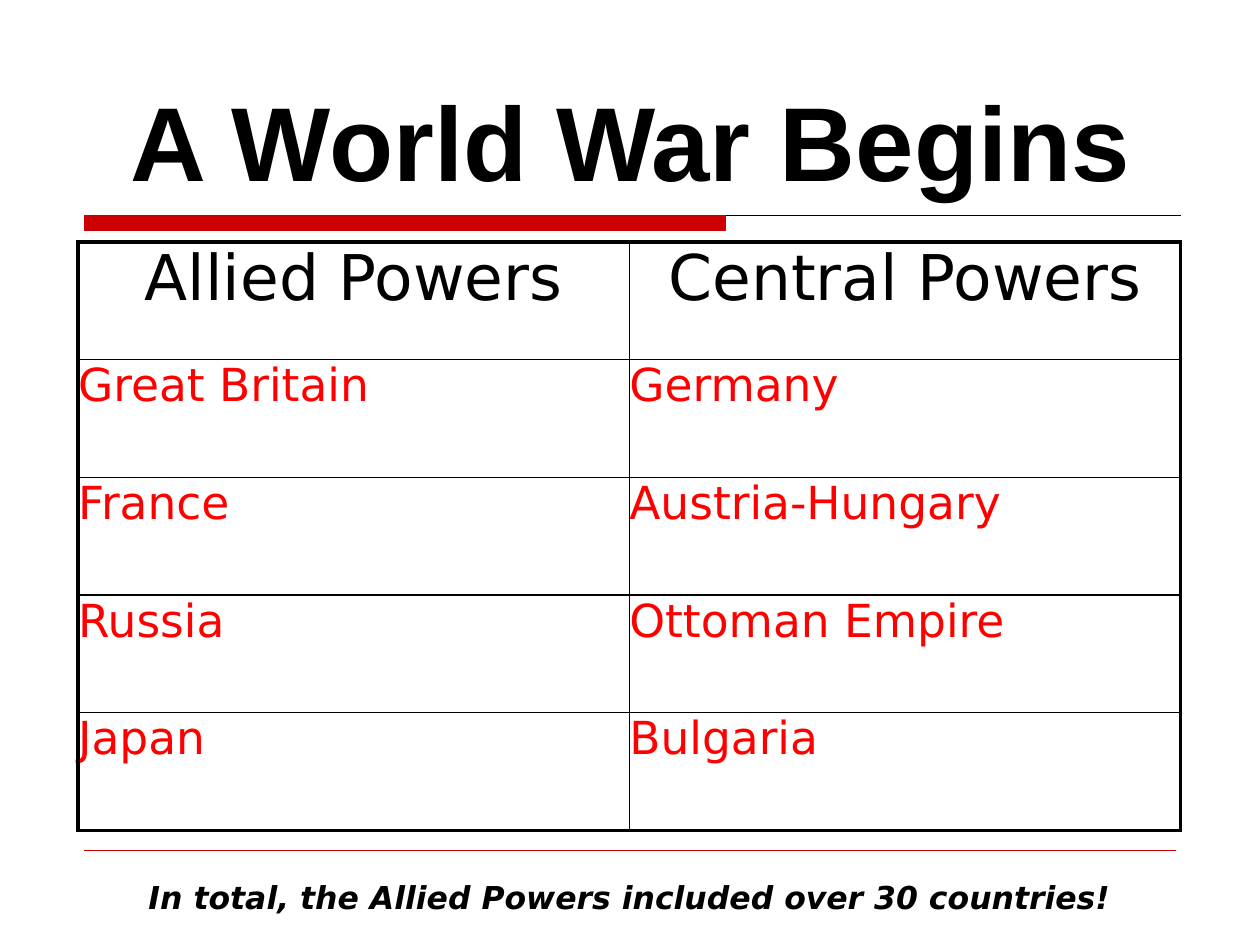
from lxml import etree
from pptx import Presentation
from pptx.dml.color import RGBColor
from pptx.enum.shapes import MSO_CONNECTOR, MSO_SHAPE
from pptx.enum.text import MSO_ANCHOR, MSO_AUTO_SIZE, PP_ALIGN
from pptx.oxml.ns import qn
from pptx.util import Inches, Pt

BLACK = RGBColor(0x00, 0x00, 0x00)
RED = RGBColor(0xFF, 0x00, 0x00)
DARK_RED = RGBColor(0xCC, 0x00, 0x00)
CENTER, LEFT = PP_ALIGN.CENTER, PP_ALIGN.LEFT
BOTTOM = MSO_ANCHOR.BOTTOM
NO_FIT = MSO_AUTO_SIZE.NONE
STRAIGHT = MSO_CONNECTOR.STRAIGHT
RECTANGLE = MSO_SHAPE.RECTANGLE

TITLE_FONT, BODY_FONT = "Arial", "DejaVu Sans"
OUTER, INNER = 2.25, 1
POWERS = [
    ("Allied Powers", "Central Powers"),
    ("Great Britain", "Germany"),
    ("France", "Austria-Hungary"),
    ("Russia", "Ottoman Empire"),
    ("Japan", "Bulgaria"),
]


def style(para, name, size, color, align, bold=False, italic=False):
    para.alignment = align
    font = para.font
    font.name, font.size = name, Pt(size)
    font.bold, font.italic = bold, italic
    font.color.rgb = color


def add_rule(page, left, right, top, color):
    rule = page.shapes.add_connector(
        STRAIGHT, Inches(left), Inches(top), Inches(right), Inches(top))
    rule.line.color.rgb = color
    rule.line.width = Pt(0.75)
    etree.SubElement(rule._element.spPr, qn("a:effectLst"))


def add_title(page, left, top, width, height):
    title = page.shapes.title
    title.left, title.top = Inches(left), Inches(top)
    title.width, title.height = Inches(width), Inches(height)
    frame = title.text_frame
    frame.text = "A World War Begins"
    frame.auto_size = NO_FIT
    frame.vertical_anchor = BOTTOM
    style(frame.paragraphs[0], TITLE_FONT, 60, BLACK, CENTER, bold=True)


def add_divider(page, left, top, width, height):
    """Thin rule with a thick bar under its left part."""
    add_rule(page, left, left + width, top, BLACK)
    bar = page.shapes.add_shape(
        RECTANGLE, Inches(left), Inches(top), Inches(width * 0.585), Inches(height))
    bar.shadow.inherit = False
    bar.fill.solid()
    bar.fill.fore_color.rgb = DARK_RED
    bar.line.color.rgb = DARK_RED
    bar.line.width = Pt(0.75)


def set_borders(cell, widths):
    """Draw the left, right, top and bottom borders, in that order."""
    properties = cell._tc.get_or_add_tcPr()
    for index, (side, width) in enumerate(zip("LRTB", widths)):
        line = etree.Element(qn(f"a:ln{side}"), w=str(Pt(width)))
        fill = etree.SubElement(line, qn("a:solidFill"))
        etree.SubElement(fill, qn("a:srgbClr"), val=str(BLACK))
        properties.insert(index, line)


def add_powers_table(page, left, top, width, height):
    rows, columns = len(POWERS), len(POWERS[0])
    table = page.shapes.add_table(
        rows, columns, Inches(left), Inches(top), Inches(width), Inches(height)).table
    table.first_row = table.horz_banding = False
    for r, names in enumerate(POWERS):
        for c, name in enumerate(names):
            cell = table.cell(r, c)
            cell.text = name
            cell.margin_left = cell.margin_right = 0
            cell.margin_top = cell.margin_bottom = 0
            size, color, align = (26, RED, LEFT) if r else (36, BLACK, CENTER)
            style(cell.text_frame.paragraphs[0], BODY_FONT, size, color, align)
            cell.fill.background()
            at_edge = (c == 0, c == columns - 1, r == 0, r == rows - 1)
            set_borders(cell, [OUTER if edge else INNER for edge in at_edge])


def add_remark(page, left, top, width, height):
    box = page.shapes.add_textbox(
        Inches(left), Inches(top), Inches(width), Inches(height))
    frame = box.text_frame
    frame.word_wrap = True
    frame.text = "In total, the Allied Powers included over 30 countries!"
    style(frame.paragraphs[0], BODY_FONT, 18, BLACK, LEFT, bold=True, italic=True)


def main():
    deck = Presentation()
    deck.slide_width, deck.slide_height = Inches(10), Inches(7.5)
    page = deck.slides.add_slide(deck.slide_layouts[5])
    # Heading
    add_divider(page, 0.67, 1.71, 8.7, 0.12)
    add_title(page, 0.63, 0.33, 8.75, 1.33)
    # Two alliances
    add_powers_table(page, 0.62, 1.92, 8.75, 4.67)
    # Footer
    add_rule(page, 0.67, 9.33, 6.75, DARK_RED)
    add_remark(page, 1.08, 6.92, 7.92, 0.4)
    deck.save("out.pptx")


if __name__ == "__main__":
    main()
